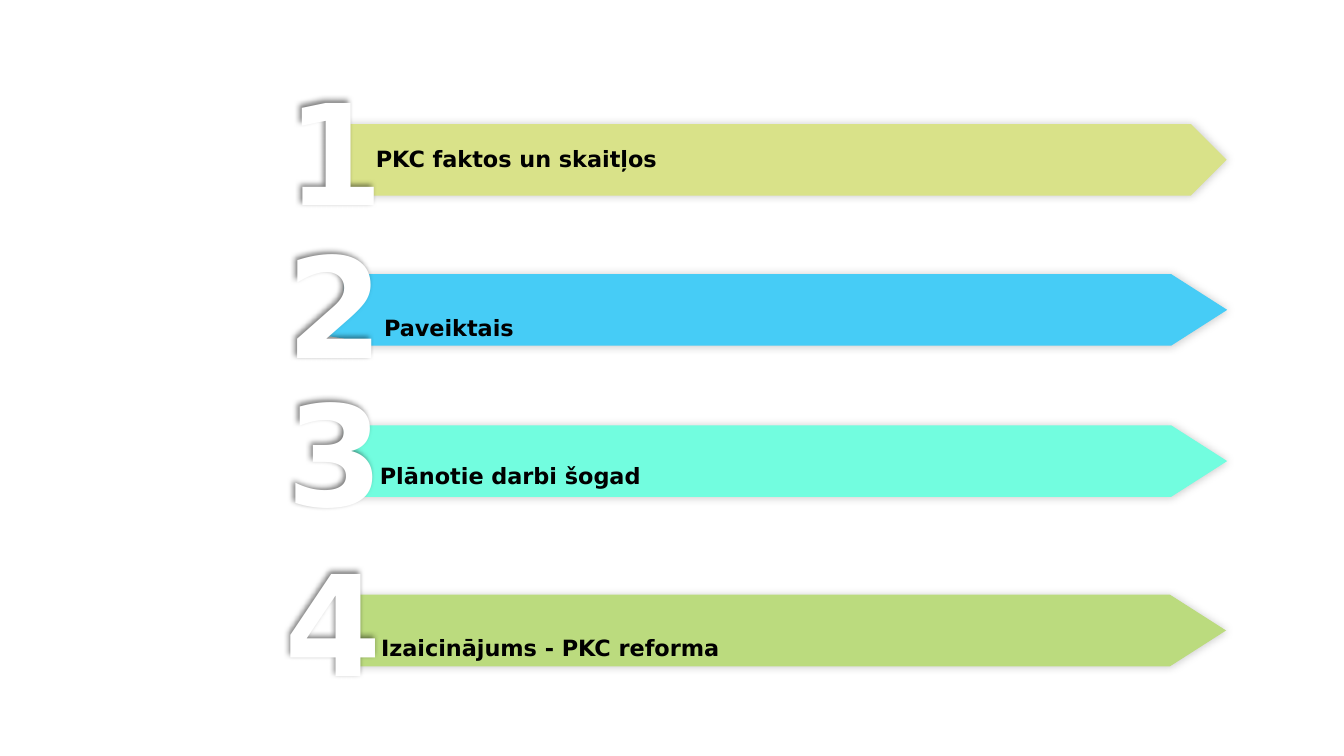
from dataclasses import dataclass

from lxml.etree import SubElement
from pptx import Presentation
from pptx.dml.color import RGBColor
from pptx.enum.shapes import MSO_SHAPE
from pptx.enum.text import MSO_ANCHOR as Anchor, PP_ALIGN as Align
from pptx.oxml.ns import qn
from pptx.util import Pt


@dataclass(frozen=True)
class Theme:
    font: str = "DejaVu Sans"
    number_color: str = "FFFFFF"
    label_color: str = "000000"
    shadow_color: str = "000000"
    bar_colors: tuple = ("D9E289", "46CCF6", "72FDDF", "BBDB7E")
    number_size: int = 100
    label_size: int = 16


theme = Theme()


def add_text(slide, text, box, *, size, color, align=Align.LEFT,
             anchor=Anchor.TOP, insets=(7.2, 3.6), line_spacing=1.0):
    """Add a bold one-line text box; insets are left and top."""
    shape = slide.shapes.add_textbox(*map(Pt, box))
    frame = shape.text_frame
    frame.word_wrap = True
    frame.vertical_anchor = anchor
    frame.margin_left, frame.margin_top = map(Pt, insets)
    paragraph = frame.paragraphs[0]
    paragraph.alignment = align
    paragraph.line_spacing = line_spacing
    run = paragraph.add_run()
    run.text = text
    run.font.name = theme.font
    run.font.size = Pt(size)
    run.font.bold = True
    run.font.color.rgb = RGBColor.from_string(color)
    return shape


def add_shadow(shape, blur, distance, angle, opacity):
    shape.shadow.inherit = False
    effects = shape._element.spPr.find(qn("a:effectLst"))
    shadow = SubElement(effects, qn("a:outerShdw"), blurRad=str(Pt(blur)),
                        dist=str(Pt(distance)), dir=str(angle * 60000),
                        algn="ctr", rotWithShape="0")
    color = SubElement(shadow, qn("a:srgbClr"), val=theme.shadow_color)
    SubElement(color, qn("a:alpha"), val=str(opacity * 1000))


presentation = Presentation()
presentation.slide_width = Pt(960)
presentation.slide_height = Pt(540)
slide = presentation.slides.add_slide(presentation.slide_layouts[6])

# Bar outline, relative to its upper left corner
BAR_HEIGHT = 51.1
ARROW = [(0, 0), (591, 0), (631, BAR_HEIGHT / 2), (591, BAR_HEIGHT), (0, BAR_HEIGHT), (0, 46)]
TAIL_OUT = [(-23, 42.5), (0, 23)]
TAIL_IN = [(9.4, 33), (0, 22.3)]

# Text, bar left and top, bar tail, number left and top, label box, label insets
items = [
    ("PKC faktos un skaitļos", 239, 88.6, None, 146.2, 43.2,
     (261.4, 77, 418.3, 61.2), (7.2, 18)),
    ("Paveiktais", 245.6, 195.8, TAIL_OUT, 146.2, 152.6,
     (274.3, 190.8, 582.5, 89.3), (0, 3.6)),
    ("Plānotie darbi šogad", 245.6, 303.8, TAIL_IN, 146.2, 258.5,
     (271.4, 296.6, 557.3, 89.3), (0, 3.6)),
    ("Izaicinājums - PKC reforma", 244.8, 424.8, TAIL_IN, 145.4, 379.4,
     (272.2, 419, 557.3, 89.3), (0, 3.6)),
]

for number, (item, bar_color) in enumerate(zip(items, theme.bar_colors), start=1):
    text, left, top, tail, number_left, number_top, label_box, insets = item
    if tail is None:
        bar = slide.shapes.add_shape(MSO_SHAPE.PENTAGON, Pt(left), Pt(top),
                                     Pt(637.2), Pt(BAR_HEIGHT))
    else:
        points = [(Pt(left + x), Pt(top + y)) for x, y in ARROW + tail]
        builder = slide.shapes.build_freeform(*points[0])
        builder.add_line_segments(points[1:], close=True)
        bar = builder.convert_to_shape()
    bar.fill.solid()
    bar.fill.fore_color.rgb = RGBColor.from_string(bar_color)
    bar.line.fill.background()
    add_shadow(bar, blur=6, distance=0, angle=315, opacity=20)

    digit = add_text(slide, str(number), (number_left, number_top, 185.8, 128.2),
                     size=theme.number_size, color=theme.number_color, align=Align.CENTER)
    add_shadow(digit, blur=4, distance=3, angle=225, opacity=50)

    add_text(slide, text, label_box, size=theme.label_size, color=theme.label_color,
             anchor=Anchor.MIDDLE, insets=insets, line_spacing=0.9)

presentation.save("out.pptx")
